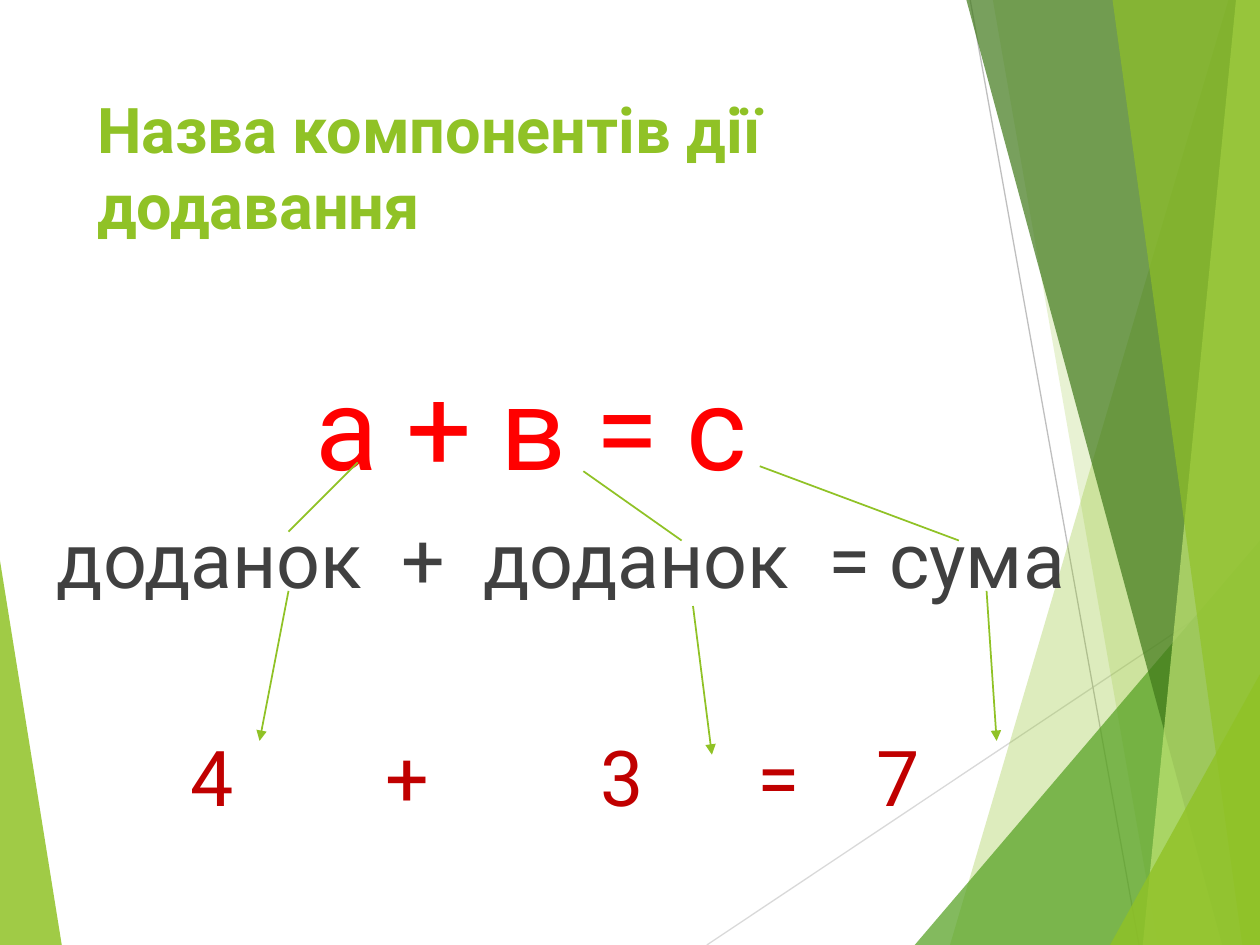
from collections import namedtuple

from lxml import etree
from pptx import Presentation
from pptx.dml.color import RGBColor
from pptx.enum.shapes import MSO_CONNECTOR
from pptx.enum.text import MSO_ANCHOR, MSO_AUTO_SIZE, PP_ALIGN
from pptx.oxml.ns import qn
from pptx.util import Pt

PX = 9144  # EMU in one px, 100 px to the inch
STRAIGHT = MSO_CONNECTOR.STRAIGHT
TOP = MSO_ANCHOR.TOP
LEFT = PP_ALIGN.LEFT
FIXED = MSO_AUTO_SIZE.NONE

Box = namedtuple("Box", "x y w h")


class Theme:
    font = "Roboto"
    lime, green, forest, pale = "90C226", "54A021", "3F7819", "C0E474"
    ink, red, wine = "404040", "FF0000", "C00000"
    dim, faint = "BFBFBF", "D9D9D9"
    head, big, body = 36, 66, 44
    thin, rule = 0.75, 1


def rgb(code):
    return RGBColor.from_string(code)


def facet(slide, box, points, color, alpha):
    """Draw one see-through polygon, with points relative to the box."""
    spots = [(box.x + x, box.y + y) for x, y in points]
    form = slide.shapes.build_freeform(*spots[0], scale=PX)
    form.add_line_segments(spots[1:], close=True)
    shape = form.convert_to_shape()
    shape.shadow.inherit = False
    shape.line.fill.background()
    shape.fill.solid()
    shape.fill.fore_color.rgb = rgb(color)
    tint = next(shape.element.spPr.iter(qn("a:srgbClr")))
    etree.SubElement(tint, qn("a:alpha"), val=str(alpha * 1000))


def link(slide, box, start, end, color, width, arrow=False):
    """Draw one straight line, with ends relative to the box."""
    line = slide.shapes.add_connector(
        STRAIGHT,
        (box.x + start[0]) * PX, (box.y + start[1]) * PX,
        (box.x + end[0]) * PX, (box.y + end[1]) * PX)
    line.line.color.rgb = rgb(color)
    line.line.width = Pt(width)
    if arrow:
        stroke = line.element.spPr.find(qn("a:ln"))
        etree.SubElement(stroke, qn("a:tailEnd"), type="triangle")
    etree.SubElement(line.element.spPr, qn("a:effectLst"))


def place(holder, box, inset):
    """Move a placeholder to the box, in front of what is drawn so far."""
    holder.left, holder.top = box.x * PX, box.y * PX
    holder.width, holder.height = box.w * PX, box.h * PX
    holder.element.getparent().append(holder.element)
    frame = holder.text_frame
    frame.word_wrap = True
    frame.auto_size = FIXED
    frame.vertical_anchor = TOP
    frame.margin_top = inset * PX
    return frame


def write(para, text, size, color, bold=False, track=0):
    """Add one run; track widens its letter spacing, in points."""
    run = para.add_run()
    run.text = text
    run.font.name = Theme.font
    run.font.size = Pt(size)
    run.font.bold = bold
    run.font.color.rgb = rgb(color)
    if track:
        run.font._element.set("spc", str(round(track * 100)))


def indent(para, left):
    """Drop the bullet and set the left margin."""
    para.alignment = LEFT
    props = para._p.get_or_add_pPr()
    props.set("marL", str(left * PX))
    props.set("indent", "0")
    etree.SubElement(props, qn("a:buNone"))


def wedge(slide, box):
    facet(slide, box, [(0, 0), (box.w, box.h), (0, box.h)], Theme.lime, 85)


def fan(slide, box):
    """Thin lines and overlapping facets along the right edge."""
    w, h = box.w, box.h
    link(slide, box, (0, h), (w, 457), Theme.faint, Theme.thin)
    link(slide, box, (209, 0), (343, h), Theme.dim, Theme.thin)
    # Upper x (None: a triangle), lower x, top of right edge, colour, opacity
    facets = [
        (414, 193, 0, Theme.lime, 30),
        (227, 358, 0, Theme.lime, 20),
        (None, 165, 429, Theme.green, 72),
        (206, 409, 0, Theme.forest, 70),
        (420, 346, 0, Theme.pale, 70),
        (322, 425, 0, Theme.lime, 65),
        (None, 320, 535, Theme.lime, 80),
    ]
    for upper, lower, top, color, alpha in facets:
        points = [(lower, h), (w, h), (w, top)]
        if upper is not None:
            points.append((upper, top))
        facet(slide, box, points, color, alpha)


def heading(slide, box):
    frame = place(slide.shapes.title, box, 5)
    para = frame.paragraphs[0]
    para.alignment = LEFT
    write(para, "Назва компонентів дії додавання",
          Theme.head, Theme.lime, True)


def sums(slide, box):
    """The letter sum, the names of its parts and a number sum."""
    frame = place(slide.placeholders[1], box, 49)
    # Parts, points added to the space after each, size, colour,
    # space before, left margin
    rows = [
        (["а + в = с"], [], Theme.big, Theme.red, 0, 205),
        (["доданок", "+", "доданок", "= сума"], [11, 11, 11],
         Theme.body, Theme.ink, 10, 0),
        (["4", "+", "3", "=", "7"], [76, 87, 54, 33],
         Theme.body, Theme.wine, 72, 106),
    ]
    for i, (parts, gaps, size, color, above, left) in enumerate(rows):
        para = frame.add_paragraph() if i else frame.paragraphs[0]
        para.space_before = Pt(above)
        indent(para, left)
        write(para, parts[0], size, color)
        for gap, part in zip(gaps, parts[1:]):
            write(para, " ", size, color, track=gap)
            write(para, part, size, color)


def links(slide, box):
    """Lines from letters to names, arrows from names to numbers."""
    arrows = [((194, 236), (171, 355)),
              ((515, 248), (530, 366)),
              ((748, 236), (756, 355))]
    lines = [((249, 134), (194, 189)),
             ((428, 141), (506, 196)),
             ((568, 137), (726, 196))]
    for pairs, arrow in ((arrows, True), (lines, False)):
        for start, end in pairs:
            link(slide, box, start, end, Theme.lime, Theme.rule, arrow)


def main():
    deck = Presentation()
    deck.slide_width, deck.slide_height = 1000 * PX, 750 * PX
    slide = deck.slides.add_slide(deck.slide_layouts[1])
    body = Box(35, 233, 866, 495)
    wedge(slide, Box(0, 445, 49, 305))
    fan(slide, Box(561, 0, 439, 750))
    heading(slide, Box(67, 67, 694, 144))
    sums(slide, body)
    links(slide, body)
    deck.save("out.pptx")


if __name__ == "__main__":
    main()
